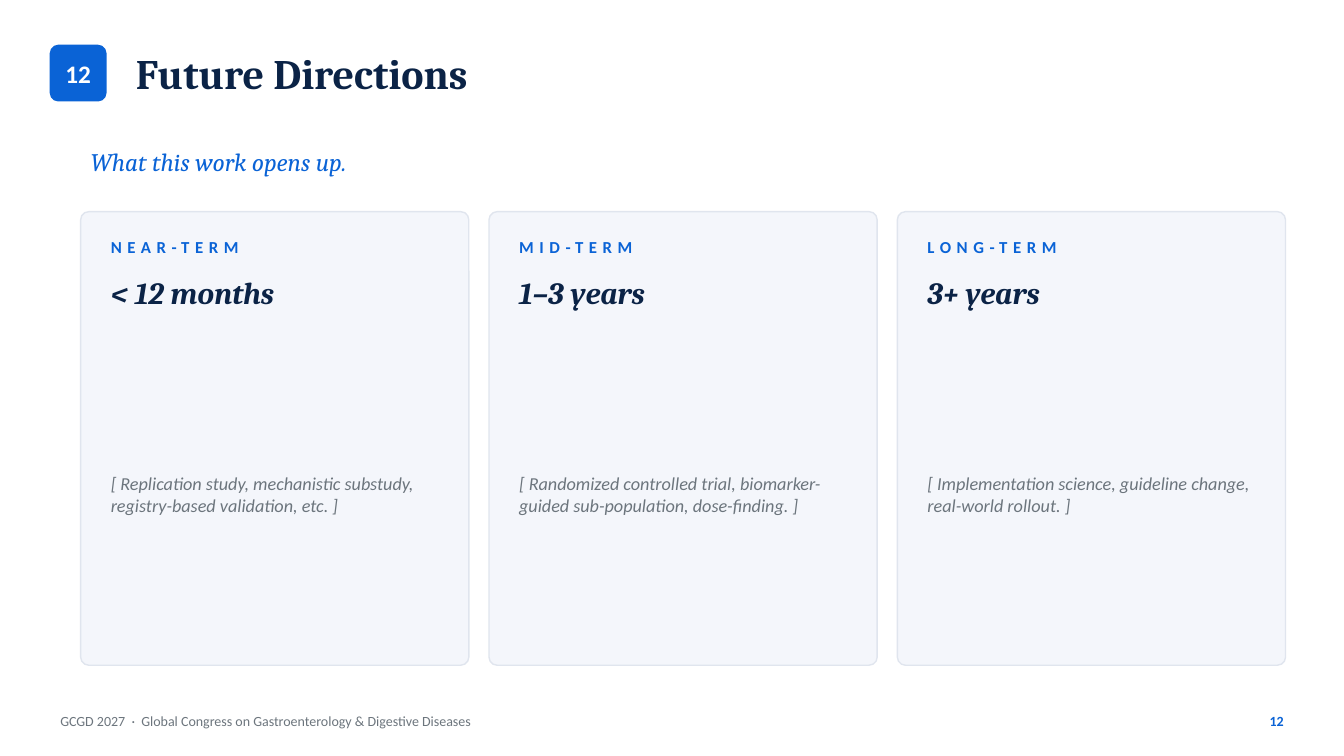
from dataclasses import dataclass
from pptx import Presentation
from pptx.dml.color import RGBColor
from pptx.enum.shapes import MSO_SHAPE
from pptx.enum.text import MSO_ANCHOR, PP_ALIGN
from pptx.util import Pt

ROUND = MSO_SHAPE.ROUNDED_RECTANGLE
MIDDLE = MSO_ANCHOR.MIDDLE
LEFT, CENTER, RIGHT = PP_ALIGN.LEFT, PP_ALIGN.CENTER, PP_ALIGN.RIGHT


@dataclass(frozen=True)
class Theme:
    sans: str = "Calibri"
    serif: str = "Cambria"
    blue: str = "0A63D6"
    navy: str = "0B2346"
    gray: str = "6C757D"
    white: str = "FFFFFF"
    panel: str = "F4F6FB"
    edge: str = "E0E5EE"
    title: int = 30
    span: int = 22
    lead: int = 18
    body: int = 13
    label: int = 12
    foot: int = 10


THEME = Theme()

TERMS = [
    ("NEAR-TERM", "< 12 months",
     "[ Replication study, mechanistic substudy, registry-based validation, etc. ]"),
    ("MID-TERM", "1–3 years",
     "[ Randomized controlled trial, biomarker-guided sub-population, dose-finding. ]"),
    ("LONG-TERM", "3+ years",
     "[ Implementation science, guideline change, real-world rollout. ]"),
]


def write(shape, text, *, size, color, font=THEME.sans, bold=False,
          italic=False, align=LEFT, track=0):
    frame = shape.text_frame
    frame.word_wrap = True
    frame.vertical_anchor = MIDDLE
    para = frame.paragraphs[0]
    para.alignment = align
    run = para.add_run()
    run.text = text
    run.font.name = font
    run.font.size = Pt(size)
    run.font.bold = bold
    run.font.italic = italic
    run.font.color.rgb = RGBColor.from_string(color)
    if track:
        run._r.get_or_add_rPr().set("spc", str(track * 100))


def add_text(slide, box, text, **style):
    write(slide.shapes.add_textbox(*map(Pt, box)), text, **style)


def add_panel(slide, box, fill, edge, radius):
    panel = slide.shapes.add_shape(ROUND, *map(Pt, box))
    panel.shadow.inherit = False
    panel.adjustments[0] = radius / min(box[2:])
    panel.fill.solid()
    panel.fill.fore_color.rgb = RGBColor.from_string(fill)
    panel.line.color.rgb = RGBColor.from_string(edge)
    panel.line.width = Pt(1)
    return panel


def add_header(slide, box, number, title):
    x, y, w, h = box
    badge = add_panel(slide, (x, y, h, h), THEME.blue, THEME.blue, 5.75)
    write(badge, number, size=THEME.lead, color=THEME.white, bold=True,
          align=CENTER)
    add_text(slide, (x + 54, y, w - 54, h), title, size=THEME.title,
             color=THEME.navy, font=THEME.serif, bold=True)


def add_card(slide, box, label, span, note):
    x, y, w, h = box
    pad = 14.4
    left, width = x + pad, w - 2 * pad
    add_panel(slide, box, THEME.panel, THEME.edge, 5.82)
    add_text(slide, (left, y + pad, width, 21.6), label, size=THEME.label,
             color=THEME.blue, bold=True, track=4)
    add_text(slide, (left, y + 39.6, width, 36), span, size=THEME.span,
             color=THEME.navy, font=THEME.serif, bold=True, italic=True)
    add_text(slide, (left, y + 93.6, width, h - 93.6 - pad), note,
             size=THEME.body, color=THEME.gray, italic=True)


def add_cards(slide, box, terms, gap=14.4):
    x, y, w, h = box
    width = (w - gap * (len(terms) - 1)) / len(terms)
    for i, term in enumerate(terms):
        add_card(slide, (x + i * (width + gap), y, width, h), *term)


def add_footer(slide, box, text, number):
    x, y, w, h = box
    add_text(slide, (x, y, 648, h), text, size=THEME.foot, color=THEME.gray)
    add_text(slide, (x + w - 36, y, 36, h), number, size=THEME.foot,
             color=THEME.blue, bold=True, align=RIGHT)


def main():
    deck = Presentation()
    deck.slide_width, deck.slide_height = Pt(959.76), Pt(540)
    slide = deck.slides.add_slide(deck.slide_layouts[6])
    add_header(slide, (36, 32.4, 882, 39.6), "12", "Future Directions")
    add_text(slide, (57.6, 100.8, 842.4, 28.8), "What this work opens up.",
             size=THEME.lead, color=THEME.blue, font=THEME.serif, italic=True)
    add_cards(slide, (57.6, 151.2, 860.4, 324), TERMS)
    add_footer(slide, (36, 504, 887.76, 21.6),
               "GCGD 2027  ·  Global Congress on Gastroenterology & Digestive Diseases",
               "12")
    deck.save("out.pptx")


if __name__ == "__main__":
    main()
